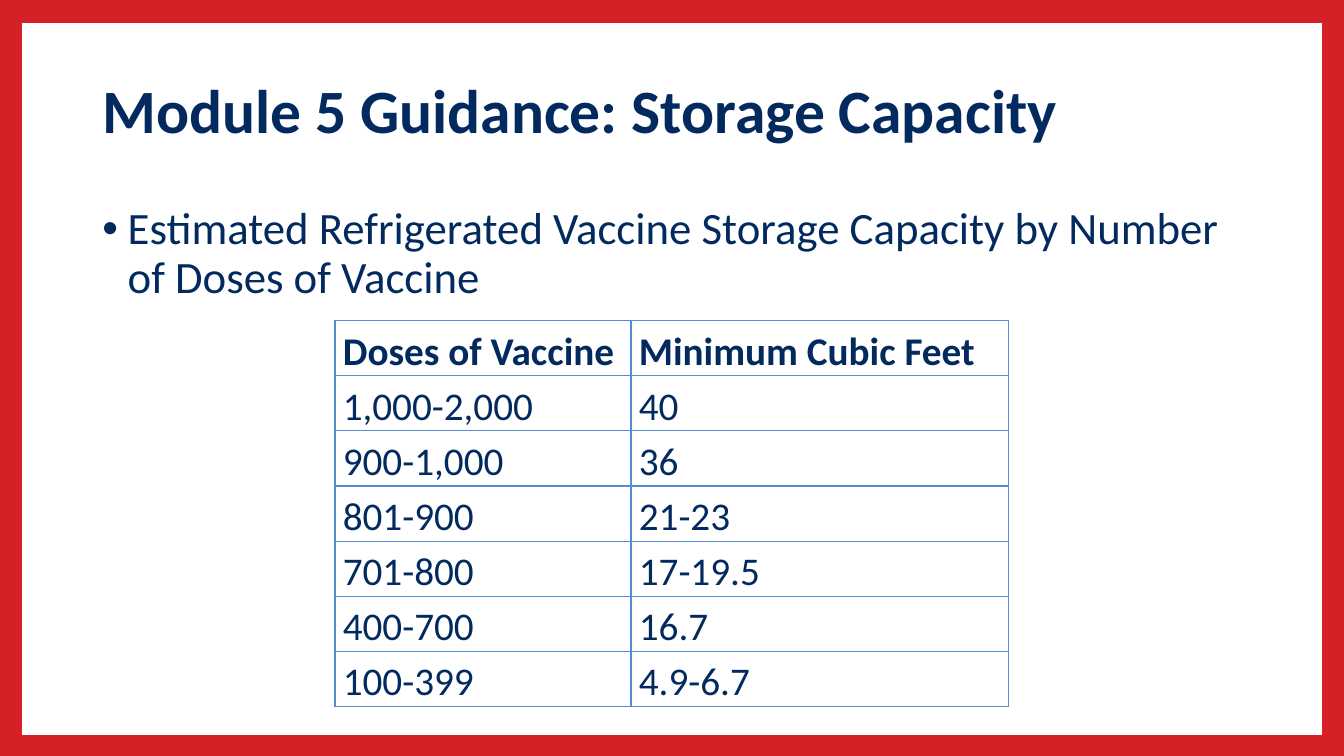
from lxml.etree import SubElement as Sub
from pptx import Presentation
from pptx.dml.color import RGBColor as Rgb
from pptx.enum.shapes import MSO_SHAPE as Shape
from pptx.enum.text import MSO_ANCHOR as Anchor
from pptx.oxml.ns import qn
from pptx.util import Cm, Pt

INK = {"navy": "032A5F", "red": "D62027", "blue": "548DD4"}
ROWS = [
    ("Doses of Vaccine", "Minimum Cubic Feet"),
    ("1,000-2,000", "40"),
    ("900-1,000", "36"),
    ("801-900", "21-23"),
    ("701-800", "17-19.5"),
    ("400-700", "16.7"),
    ("100-399", "4.9-6.7"),
]


class Page:
    font = "Calibri"

    def __init__(self, slide):
        self.slide = slide

    def style(self, para, size, bold=False, space=0.9):
        para.line_spacing = space
        for run in para.runs:
            run.font.name = self.font
            run.font.size = Pt(size)
            run.font.bold = bold
            run.font.color.rgb = Rgb.from_string(INK["navy"])

    def frame(self, box, width):
        rect = self.slide.shapes.add_shape(Shape.RECTANGLE, *map(Cm, box))
        rect.shadow.inherit = False
        rect.fill.background()
        rect.line.color.rgb = Rgb.from_string(INK["red"])
        rect.line.width = Pt(width)

    def text(self, box, words, size, bold=False, anchor=Anchor.TOP):
        body = self.slide.shapes.add_textbox(*map(Cm, box)).text_frame
        body.word_wrap = True
        body.vertical_anchor = anchor
        body.text = words
        para = body.paragraphs[0]
        self.style(para, size, bold)
        return para

    def bullet(self, box, words, size):
        para = self.text(box, words, size)
        para.space_before = Pt(10)
        props = para._p.get_or_add_pPr()
        props.set("marL", str(Cm(0.64)))
        props.set("indent", str(-Cm(0.64)))
        Sub(props, qn("a:buFont"), typeface="Arial")
        Sub(props, qn("a:buChar"), char="•")

    def border(self, cell):
        props = cell._tc.get_or_add_tcPr()
        for side in ("lnL", "lnR", "lnT", "lnB"):
            line = Sub(props, qn("a:" + side), w=str(Pt(1)))
            fill = Sub(line, qn("a:solidFill"))
            Sub(fill, qn("a:srgbClr"), val=INK["blue"])

    def table(self, left, top, cols, high, rows, size):
        box = (left, top, sum(cols), high * len(rows))
        grid = self.slide.shapes.add_table(len(rows), len(cols), *map(Cm, box)).table
        grid.horz_banding = False
        for col, width in zip(grid.columns, cols):
            col.width = Cm(width)
        for r, row in enumerate(rows):
            grid.rows[r].height = Cm(high)
            for c, words in enumerate(row):
                cell = grid.cell(r, c)
                cell.margin_left = cell.margin_right = Cm(0.2)
                cell.margin_top = cell.margin_bottom = 0
                cell.text = words
                self.style(cell.text_frame.paragraphs[0], size, r == 0, 1.15)
                self.border(cell)
                cell.fill.background()


def main():
    deck = Presentation()
    deck.slide_width, deck.slide_height = Cm(33.87), Cm(19.05)
    page = Page(deck.slides.add_slide(deck.slide_layouts[6]))
    page.frame((0.2, 0.23, 33.46, 18.64), 20)
    page.text((2.33, 1.01, 29.21, 3.68), "Module 5 Guidance: Storage Capacity",
              44, True, Anchor.MIDDLE)
    page.bullet((2.33, 5.07, 29.21, 12.09),
                "Estimated Refrigerated Vaccine Storage Capacity by Number of Doses of Vaccine", 32)
    page.table(8.44, 8.08, (7.46, 9.52), 1.39, ROWS, 28)
    deck.save("out.pptx")


if __name__ == "__main__":
    main()
